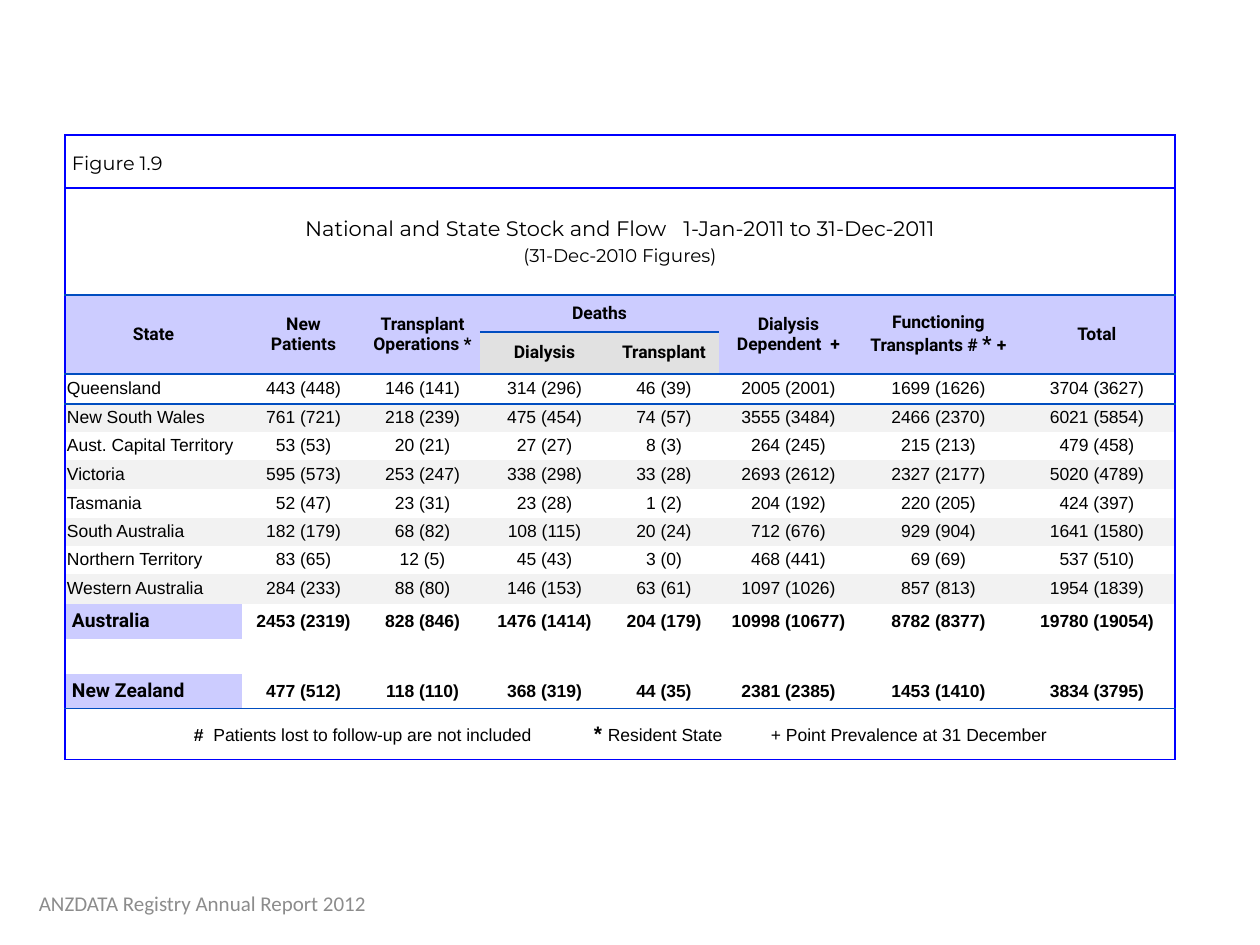
from dataclasses import dataclass

from lxml import etree
from pptx import Presentation
from pptx.dml.color import RGBColor
from pptx.enum.text import MSO_ANCHOR, PP_ALIGN
from pptx.oxml.ns import qn
from pptx.util import Pt

PX = 914400 // 126
LEFT, CENTER = PP_ALIGN.LEFT, PP_ALIGN.CENTER
MIDDLE = MSO_ANCHOR.MIDDLE
NO_GRID_STYLE = "{2D5ABB26-0587-4C30-8999-92F81FD0307C}"


@dataclass(frozen=True)
class Style:
    font: str
    size: float
    bold: bool = False
    color: str = "000000"
    spacing: int = 0  # hundredths of a point


class Theme:
    frame, rule = "0000FF", "004DC0"
    lavender, grey, band = "CCCCFF", "E1E1E1", "F2F2F2"
    label = Style("Montserrat", 11)
    title = Style("Montserrat", 12)
    title_gap = Style("Montserrat", 12, spacing=640)
    subtitle = Style("Montserrat", 10.5)
    head = Style("Roboto", 10, True)
    head_gap = Style("Roboto", 10, True, spacing=250)
    head_star = Style("Roboto", 12, True)
    country = Style("Roboto", 11, True)
    body = Style("Arial", 10)
    strong = Style("Arial", 10, True)
    strong_gap = Style("Arial", 10, True, spacing=280)
    star = Style("Arial", 12, True)
    source = Style("Calibri", 12, color="8C8C8C")


SOURCE = "ANZDATA Registry Annual Report 2012"
FIGURE = [[("Figure 1.9", Theme.label)]]
TITLE = [
    [("National and State Stock and Flow", Theme.title), (" ", Theme.title_gap),
     ("1-Jan-2011 to 31-Dec-2011", Theme.title)],
    [("(31-Dec-2010 Figures)", Theme.subtitle)],
]
# column: paragraphs of the header cells that are two rows high
TALL_HEADERS = {
    0: [[("State", Theme.head)]],
    1: [[("New", Theme.head)], [("Patients", Theme.head)]],
    2: [[("Transplant", Theme.head)], [("Operations *", Theme.head)]],
    5: [[("Dialysis", Theme.head)],
        [("Dependent", Theme.head), (" ", Theme.head_gap), ("+", Theme.head)]],
    6: [[("Functioning", Theme.head)],
        [("Transplants # ", Theme.head), ("* ", Theme.head_star), ("+", Theme.head)]],
    7: [[("Total", Theme.head)]],
}
DEATHS = "Deaths"
DEATH_COLUMNS = {3: "Dialysis", 4: "Transplant"}
STATES = [
    ("Queensland", "443 (448)", "146 (141)", "314 (296)", "46 (39)",
     "2005 (2001)", "1699 (1626)", "3704 (3627)"),
    ("New South Wales", "761 (721)", "218 (239)", "475 (454)", "74 (57)",
     "3555 (3484)", "2466 (2370)", "6021 (5854)"),
    ("Aust. Capital Territory", "53 (53)", "20 (21)", "27 (27)", "8 (3)",
     "264 (245)", "215 (213)", "479 (458)"),
    ("Victoria", "595 (573)", "253 (247)", "338 (298)", "33 (28)",
     "2693 (2612)", "2327 (2177)", "5020 (4789)"),
    ("Tasmania", "52 (47)", "23 (31)", "23 (28)", "1 (2)",
     "204 (192)", "220 (205)", "424 (397)"),
    ("South Australia", "182 (179)", "68 (82)", "108 (115)", "20 (24)",
     "712 (676)", "929 (904)", "1641 (1580)"),
    ("Northern Territory", "83 (65)", "12 (5)", "45 (43)", "3 (0)",
     "468 (441)", "69 (69)", "537 (510)"),
    ("Western Australia", "284 (233)", "88 (80)", "146 (153)", "63 (61)",
     "1097 (1026)", "857 (813)", "1954 (1839)"),
]
COUNTRIES = {
    12: ("Australia", "2453 (2319)", "828 (846)", "1476 (1414)", "204 (179)",
         "10998 (10677)", "8782 (8377)", "19780 (19054)"),
    14: ("New Zealand", "477 (512)", "118 (110)", "368 (319)", "44 (35)",
         "2381 (2385)", "1453 (1410)", "3834 (3795)"),
}
NOTES = [[
    ("#", Theme.strong), (" ", Theme.strong_gap),
    ("Patients lost to follow-up are not included\t", Theme.body),
    ("* ", Theme.star),
    ("Resident State\t+ Point Prevalence at 31 December", Theme.body),
]]
NOTE_INDENT, NOTE_TABS = 129, (400, 577)

TABLE_LEFT, TABLE_TOP = 65, 135
COLUMN_WIDTHS = (177, 123, 115, 129, 110, 139, 161, 156)
ROW_HEIGHTS = (53, 107, 37, 42, 30, 28, 28, 29, 29, 28, 28, 30, 35, 35, 35, 51)
LAST_COLUMN, LAST_ROW = len(COLUMN_WIDTHS) - 1, len(ROW_HEIGHTS) - 1
FIRST_STATE = 4
# row: colour of the line beneath it
ROW_LINES = {-1: Theme.frame, 0: Theme.frame, 1: Theme.rule, 3: Theme.rule,
             14: Theme.rule, LAST_ROW: Theme.frame}


def write(frame, paragraphs, align):
    for index, runs in enumerate(paragraphs):
        paragraph = frame.paragraphs[0] if index == 0 else frame.add_paragraph()
        paragraph.alignment = align
        for text, style in runs:
            run = paragraph.add_run()
            run.text = text
            run.font.name, run.font.size = style.font, Pt(style.size)
            run.font.bold = style.bold
            run.font.color.rgb = RGBColor.from_string(style.color)
            if style.spacing:
                run.font._element.set("spc", str(style.spacing))


def fill_cell(cell, paragraphs, align=CENTER, color=None, indent=2):
    cell.margin_left = indent * PX
    write(cell.text_frame, paragraphs, align)
    if color:
        cell.fill.solid()
        cell.fill.fore_color.rgb = RGBColor.from_string(color)


def line_below(row, column):
    if row == 2 and column in DEATH_COLUMNS:
        return Theme.rule
    return ROW_LINES.get(row)


def prepare_cell(cell, row, column):
    """Set margins, the size of empty text and the borders of a cell or merged area."""
    cell.vertical_anchor = MIDDLE
    cell.margin_left = cell.margin_right = cell.margin_top = cell.margin_bottom = 2 * PX
    etree.SubElement(cell.text_frame.paragraphs[0]._p, qn("a:endParaRPr"), sz="1000")
    bottom = row + (cell.span_height if cell.is_merge_origin else 1) - 1
    right = column + (cell.span_width if cell.is_merge_origin else 1) - 1
    borders = {
        "a:lnL": Theme.frame if column == 0 else None,
        "a:lnR": Theme.frame if right == LAST_COLUMN else None,
        "a:lnT": line_below(row - 1, column),
        "a:lnB": line_below(bottom, column),
    }
    properties = cell._tc.get_or_add_tcPr()
    for tag, color in borders.items():
        if color:
            line = etree.SubElement(properties, qn(tag), w=str(Pt(1)))
            solid = etree.SubElement(line, qn("a:solidFill"))
            etree.SubElement(solid, qn("a:srgbClr"), val=color)


def add_data_row(table, row, values, name_style, value_style, name_fill, fill, indent):
    fill_cell(table.cell(row, 0), [[(values[0], name_style)]], LEFT, name_fill, indent)
    for column, value in enumerate(values[1:], 1):
        fill_cell(table.cell(row, column), [[(value, value_style)]], color=fill)


def add_stock_table(slide):
    table = slide.shapes.add_table(
        len(ROW_HEIGHTS), len(COLUMN_WIDTHS), TABLE_LEFT * PX, TABLE_TOP * PX,
        sum(COLUMN_WIDTHS) * PX, sum(ROW_HEIGHTS) * PX).table
    table.first_row = table.horz_banding = False
    table._tbl.tblPr.find(qn("a:tableStyleId")).text = NO_GRID_STYLE
    for column, width in zip(table.columns, COLUMN_WIDTHS):
        column.width = width * PX
    for row, height in zip(table.rows, ROW_HEIGHTS):
        row.height = height * PX

    for row in (0, 1, LAST_ROW):
        table.cell(row, 0).merge(table.cell(row, LAST_COLUMN))
    for column in TALL_HEADERS:
        table.cell(2, column).merge(table.cell(3, column))
    table.cell(2, 3).merge(table.cell(2, 4))
    for row in range(len(ROW_HEIGHTS)):
        for column in range(len(COLUMN_WIDTHS)):
            prepare_cell(table.cell(row, column), row, column)

    fill_cell(table.cell(0, 0), FIGURE, LEFT, indent=7)
    table.cell(0, 0).text_frame.paragraphs[0].line_spacing = 1.14
    fill_cell(table.cell(1, 0), TITLE)
    subtitle = table.cell(1, 0).text_frame.paragraphs[1]
    subtitle.space_before, subtitle.space_after = Pt(2), Pt(1)

    for column, paragraphs in TALL_HEADERS.items():
        fill_cell(table.cell(2, column), paragraphs, color=Theme.lavender)
    fill_cell(table.cell(2, 3), [[(DEATHS, Theme.head)]], color=Theme.lavender)
    for column, text in DEATH_COLUMNS.items():
        fill_cell(table.cell(3, column), [[(text, Theme.head)]], color=Theme.grey)

    for index, values in enumerate(STATES):
        band = Theme.band if index % 2 else None
        add_data_row(table, FIRST_STATE + index, values, Theme.body, Theme.body, band, band, 2)
    for row, values in COUNTRIES.items():
        add_data_row(table, row, values, Theme.country, Theme.strong, Theme.lavender, None, 7)

    notes = table.cell(LAST_ROW, 0)
    tabs = etree.SubElement(
        notes.text_frame.paragraphs[0]._p.get_or_add_pPr(), qn("a:tabLst"))
    for position in NOTE_TABS:
        etree.SubElement(tabs, qn("a:tab"), pos=str(position * PX), algn="l")
    fill_cell(notes, NOTES, LEFT, indent=NOTE_INDENT)


def main():
    presentation = Presentation()
    presentation.slide_width, presentation.slide_height = 1260 * PX, 945 * PX
    slide = presentation.slides.add_slide(presentation.slide_layouts[6])
    source = slide.shapes.add_textbox(3 * PX, 878 * PX, 399 * PX, 50 * PX).text_frame
    source.word_wrap = True
    source.vertical_anchor = MIDDLE
    write(source, [[(SOURCE, Theme.source)]], CENTER)
    add_stock_table(slide)
    presentation.save("out.pptx")


if __name__ == "__main__":
    main()
